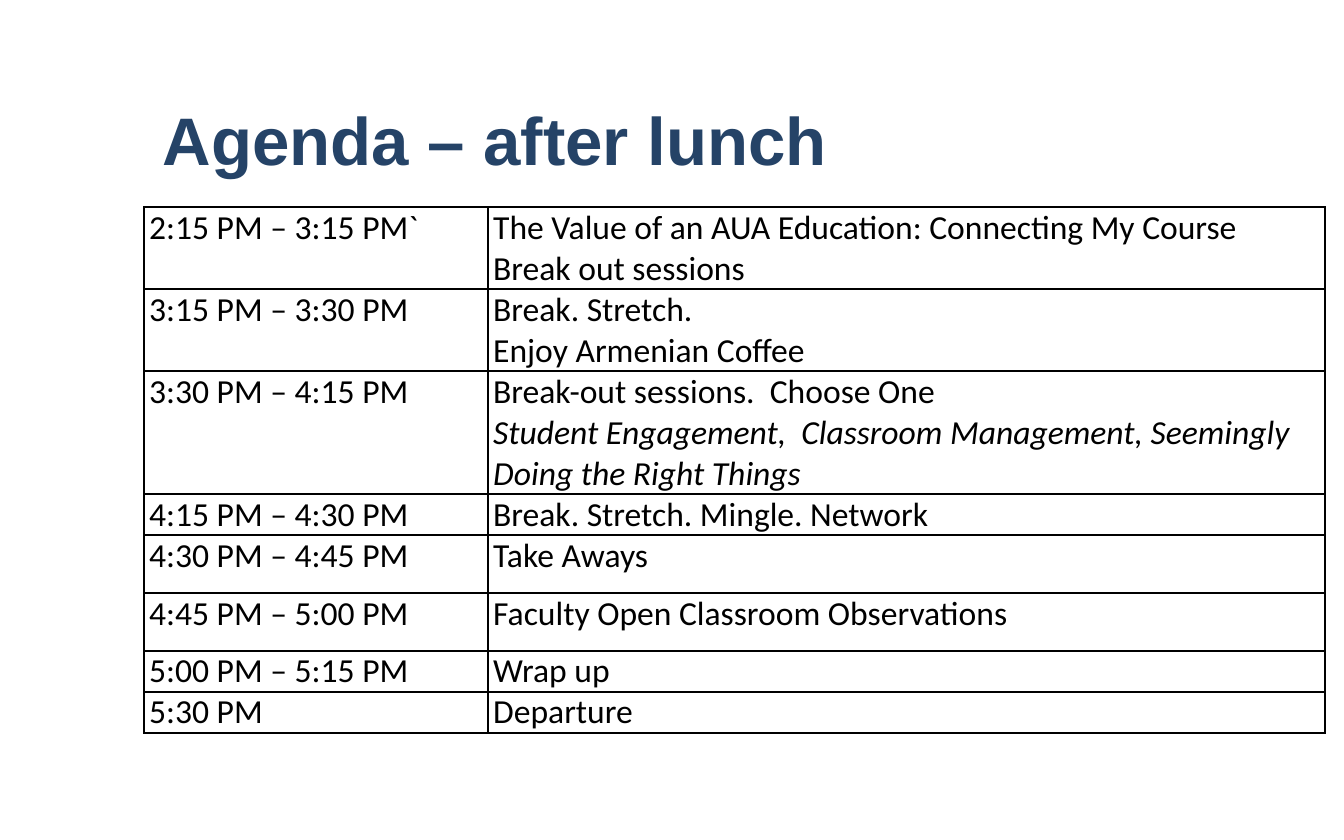
"""Build the after-lunch agenda slide with a title and a timetable."""
from dataclasses import dataclass

import pptx
import pptx.dml.color
import pptx.enum.text
import pptx.oxml
import pptx.oxml.ns
import pptx.util

EMU_PER_PX = 9144
COLORS = {"title": "254367", "text": "000000", "border": "000000"}
COLUMN_WIDTHS = (256, 623)
TITLE_ONLY = 5


@dataclass(frozen=True)
class Run:
    text: str
    italic: bool = False
    break_after: bool = False


@dataclass(frozen=True)
class Session:
    time: str
    height: int
    paragraphs: tuple[tuple[Run, ...], ...]


SESSIONS = (
    Session("2:15 PM – 3:15 PM`", 31, (
        (Run("The Value of an AUA Education: Connecting My Course"),),
        (Run("Break out sessions"),),
    )),
    Session("3:15 PM – 3:30 PM", 22, (
        (Run("Break. Stretch."),),
        (Run("Enjoy Armenian Coffee"),),
    )),
    Session("3:30 PM – 4:15 PM", 43, ((
        Run("Break-out sessions.  Choose One", break_after=True),
        Run("Student Engagement,  Classroom Management, Seemingly Doing the Right Things", italic=True),
    ),)),
    Session("4:15 PM – 4:30 PM", 22, ((Run("Break. Stretch. Mingle. Network"),),)),
    Session("4:30 PM – 4:45 PM", 43, ((Run("Take Aways"),),)),
    Session("4:45 PM – 5:00 PM", 43, ((Run("Faculty Open Classroom Observations"),),)),
    Session("5:00 PM – 5:15 PM", 22, ((Run("Wrap up"),),)),
    Session("5:30 PM", 22, ((Run("Departure"),),)),
)


def px(length: int) -> pptx.util.Emu:
    return pptx.util.Emu(length * EMU_PER_PX)


def style_font(font, name: str, size: int, color: str, bold: bool = False, italic: bool = False) -> None:
    font.name = name
    font.size = pptx.util.Pt(size)
    font.bold = bold
    font.italic = italic
    font.color.rgb = pptx.dml.color.RGBColor.from_string(COLORS[color])


def add_title(slide, text: str) -> None:
    title = slide.shapes.title
    title.left, title.top, title.width, title.height = map(px, (111, 25, 839, 113))
    frame = title.text_frame
    frame.word_wrap = True
    frame.auto_size = pptx.enum.text.MSO_AUTO_SIZE.NONE
    frame.vertical_anchor = pptx.enum.text.MSO_ANCHOR.BOTTOM
    paragraph = frame.paragraphs[0]
    paragraph.alignment = pptx.enum.text.PP_ALIGN.LEFT
    run = paragraph.add_run()
    run.text = text
    style_font(run.font, "Arial", 36, "title", bold=True)


def add_borders(cell) -> None:
    properties = cell._tc.get_or_add_tcPr()
    for side in ("lnL", "lnR", "lnT", "lnB"):
        properties.append(pptx.oxml.parse_xml(
            f'<a:{side} {pptx.oxml.ns.nsdecls("a")} w="{pptx.util.Pt(1)}"><a:solidFill>'
            f'<a:srgbClr val="{COLORS["border"]}"/></a:solidFill></a:{side}>'
        ))


def fill_cell(cell, paragraphs: tuple[tuple[Run, ...], ...]) -> None:
    cell.margin_left = cell.margin_right = px(4)
    cell.margin_top = cell.margin_bottom = 0
    cell.vertical_anchor = pptx.enum.text.MSO_ANCHOR.TOP
    add_borders(cell)
    cell.fill.background()
    frame = cell.text_frame
    for index, runs in enumerate(paragraphs):
        paragraph = frame.add_paragraph() if index else frame.paragraphs[0]
        style_font(paragraph.font, "Calibri", 18, "text")
        for part in runs:
            run = paragraph.add_run()
            run.text = part.text
            style_font(run.font, "Calibri", 18, "text", italic=part.italic)
            if part.break_after:
                paragraph.add_line_break()


def add_agenda(slide, sessions: tuple[Session, ...]) -> None:
    height = sum(session.height for session in sessions)
    table = slide.shapes.add_table(
        len(sessions), len(COLUMN_WIDTHS), px(107), px(154), px(sum(COLUMN_WIDTHS)), px(height)
    ).table
    table.first_row = False
    table.horz_banding = False
    for column, width in zip(table.columns, COLUMN_WIDTHS):
        column.width = px(width)
    for index, session in enumerate(sessions):
        table.rows[index].height = px(session.height)
        fill_cell(table.cell(index, 0), ((Run(session.time),),))
        fill_cell(table.cell(index, 1), session.paragraphs)


def main() -> None:
    presentation = pptx.Presentation()
    presentation.slide_width, presentation.slide_height = px(1000), px(625)
    slide = presentation.slides.add_slide(presentation.slide_layouts[TITLE_ONLY])
    add_title(slide, "Agenda – after lunch")
    add_agenda(slide, SESSIONS)
    presentation.save("out.pptx")


if __name__ == "__main__":
    main()
